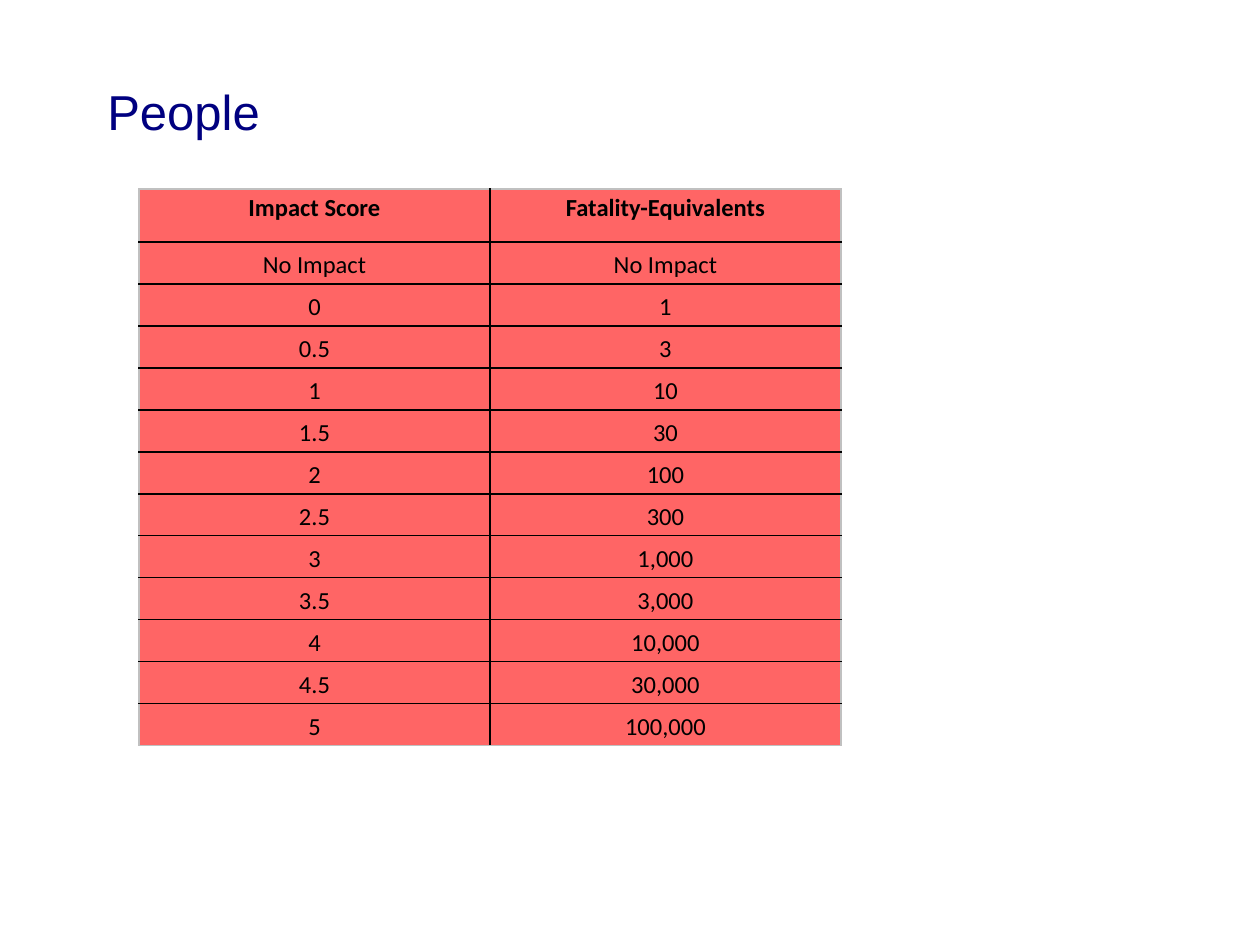
from dataclasses import dataclass

from lxml.etree import SubElement
from pptx import Presentation
from pptx.dml.color import RGBColor
from pptx.enum.text import MSO_ANCHOR, PP_ALIGN
from pptx.oxml.ns import qn
from pptx.util import Emu, Pt

EMU_PER_PX = 914400 / 126
INK = "000000"
OUTLINE = "C0C0C0"
TITLE_COLOR = "000080"
CELL_COLOR = "FF2525"
CELL_ALPHA = 70
LEFT, TOP, COLUMN_WIDTH = 139, 189, 351
HEADER_HEIGHT, ROW_HEIGHT = 53, 42
CELL_MARGIN = 10


@dataclass
class Impact:
    score: str
    fatalities: str


HEADER = Impact("Impact Score", "Fatality-Equivalents")
IMPACTS = [
    Impact("No Impact", "No Impact"),
    Impact("0", "1"),
    Impact("0.5", "3"),
    Impact("1", "10"),
    Impact("1.5", "30"),
    Impact("2", "100"),
    Impact("2.5", "300"),
    Impact("3", "1,000"),
    Impact("3.5", "3,000"),
    Impact("4", "10,000"),
    Impact("4.5", "30,000"),
    Impact("5", "100,000"),
]


def px(length: int) -> Emu:
    return Emu(round(length * EMU_PER_PX))


def color(value: str) -> RGBColor:
    return RGBColor.from_string(value)


def set_font(paragraph, name: str, size: int, value: str, bold: bool = False) -> None:
    font = paragraph.font
    font.name, font.size, font.bold = name, Pt(size), bold
    font.color.rgb = color(value)


def add_title(slide, text: str) -> None:
    shape = slide.shapes.add_textbox(px(95), px(32), px(1071), px(158))
    frame = shape.text_frame
    frame.word_wrap = True
    frame.vertical_anchor = MSO_ANCHOR.MIDDLE
    paragraph = frame.paragraphs[0]
    paragraph.text = text
    set_font(paragraph, "Arial", 28, TITLE_COLOR)


def add_border(cell, side: str, value: str) -> None:
    properties = cell._tc.get_or_add_tcPr()
    line = SubElement(properties, qn(f"a:ln{side}"), w=str(Pt(1)))
    fill = SubElement(line, qn("a:solidFill"))
    SubElement(fill, qn("a:srgbClr"), val=value)


def fill_cell(cell) -> None:
    cell.fill.solid()
    cell.fill.fore_color.rgb = color(CELL_COLOR)
    tint = cell._tc.tcPr.find(qn("a:solidFill")).find(qn("a:srgbClr"))
    SubElement(tint, qn("a:alpha"), val=str(CELL_ALPHA * 1000))


def write_cell(cell, text: str, header: bool) -> None:
    cell.margin_left = cell.margin_right = px(CELL_MARGIN)
    cell.margin_top = cell.margin_bottom = 0
    cell.vertical_anchor = MSO_ANCHOR.TOP if header else MSO_ANCHOR.MIDDLE
    paragraph = cell.text_frame.paragraphs[0]
    paragraph.text = text
    paragraph.alignment = PP_ALIGN.CENTER
    paragraph.line_spacing = 1.15
    set_font(paragraph, "Calibri", 14, INK, bold=header)


def add_impact_table(slide, impacts: list[Impact]) -> None:
    rows = [HEADER, *impacts]
    height = HEADER_HEIGHT + ROW_HEIGHT * len(impacts)
    table = slide.shapes.add_table(
        len(rows), 2, px(LEFT), px(TOP), px(2 * COLUMN_WIDTH), px(height)
    ).table
    for column in table.columns:
        column.width = px(COLUMN_WIDTH)
    last = len(rows) - 1
    for r, impact in enumerate(rows):
        table.rows[r].height = px(ROW_HEIGHT if r else HEADER_HEIGHT)
        for c, text in enumerate((impact.score, impact.fatalities)):
            cell = table.cell(r, c)
            write_cell(cell, text, header=r == 0)
            outer_sides = {"L": c == 0, "R": c == 1, "T": r == 0, "B": r == last}
            for side, outer in outer_sides.items():
                add_border(cell, side, OUTLINE if outer else INK)
            fill_cell(cell)


def main() -> None:
    presentation = Presentation()
    presentation.slide_width, presentation.slide_height = px(1260), px(945)
    slide = presentation.slides.add_slide(presentation.slide_layouts[6])
    add_title(slide, "People")
    add_impact_table(slide, IMPACTS)
    presentation.save("out.pptx")


if __name__ == "__main__":
    main()
